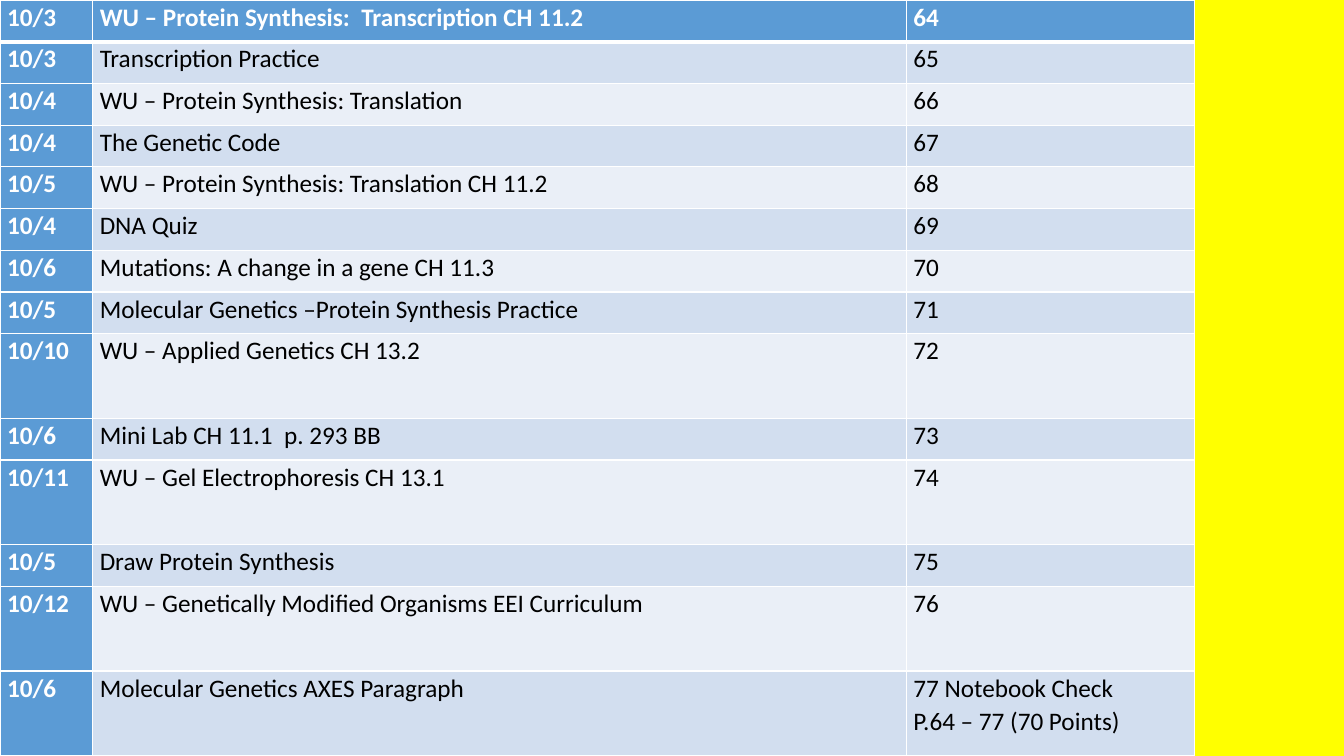
from dataclasses import dataclass

from lxml.etree import SubElement
from pptx import Presentation
from pptx.dml.color import RGBColor
from pptx.oxml.ns import qn
from pptx.util import Inches, Pt


@dataclass(frozen=True)
class Theme:
    background: str = "FFFF00"
    accent: str = "5B9BD5"
    bands: tuple = ("EAEFF7", "D2DEEF")
    light_text: str = "FFFFFF"
    dark_text: str = "000000"
    border: str = "FFFFFF"
    font: str = "Calibri"
    size: int = 18
    line_spacing: float = 1.07
    thin_border: int = 1
    header_border: int = 3


THEME = Theme()
SLIDE_WIDTH, SLIDE_HEIGHT = 13.33, 7.5
COLUMN_WIDTHS = (0.92, 8.07, 2.86)
TALL_ROW = 0.84
TALL_DATES = ("10/10", "10/11", "10/12")

# Date, assignment and notebook page
ENTRIES = [
    ("10/3", "WU – Protein Synthesis:  Transcription CH 11.2", "64"),
    ("10/3", "Transcription Practice", "65"),
    ("10/4", "WU – Protein Synthesis: Translation", "66"),
    ("10/4", "The Genetic Code", "67"),
    ("10/5", "WU – Protein Synthesis: Translation CH 11.2", "68"),
    ("10/4", "DNA Quiz", "69"),
    ("10/6", "Mutations: A change in a gene CH 11.3", "70"),
    ("10/5", "Molecular Genetics –Protein Synthesis Practice", "71"),
    ("10/10", "WU – Applied Genetics CH 13.2", "72"),
    ("10/6", "Mini Lab CH 11.1  p. 293 BB", "73"),
    ("10/11", "WU – Gel Electrophoresis CH 13.1", "74"),
    ("10/5", "Draw Protein Synthesis", "75"),
    ("10/12", "WU – Genetically Modified Organisms EEI Curriculum", "76"),
    ("10/6", "Molecular Genetics AXES Paragraph", "77 Notebook Check\nP.64 – 77 (70 Points)"),
]


def set_background(slide):
    fill = slide.background.fill
    fill.solid()
    fill.fore_color.rgb = RGBColor.from_string(THEME.background)


def row_heights():
    """Tall rows are fixed; the others share the rest of the slide height."""
    tall = [date in TALL_DATES or "\n" in page for date, _, page in ENTRIES]
    short_row = (SLIDE_HEIGHT - TALL_ROW * sum(tall)) / tall.count(False)
    return [TALL_ROW if is_tall else short_row for is_tall in tall]


def set_borders(cell, top, bottom):
    properties = cell._tc.get_or_add_tcPr()
    widths = {"L": THEME.thin_border, "R": THEME.thin_border, "T": top, "B": bottom}
    for side, width in widths.items():
        line = SubElement(properties, qn(f"a:ln{side}"), w=str(Pt(width)))
        fill = SubElement(line, qn("a:solidFill"))
        SubElement(fill, qn("a:srgbClr"), val=THEME.border)


def write_cell(cell, text, fill_color, text_color, bold):
    cell.margin_left = cell.margin_right = Inches(0.07)
    cell.margin_top = cell.margin_bottom = Inches(0)
    cell.fill.solid()
    cell.fill.fore_color.rgb = RGBColor.from_string(fill_color)
    frame = cell.text_frame
    for index, content in enumerate(text.split("\n")):
        paragraph = frame.add_paragraph() if index else frame.paragraphs[0]
        paragraph.line_spacing = THEME.line_spacing
        run = paragraph.add_run()
        run.text = content
        run.font.name = THEME.font
        run.font.size = Pt(THEME.size)
        run.font.bold = bold
        run.font.color.rgb = RGBColor.from_string(text_color)


def add_schedule(slide):
    shape = slide.shapes.add_table(
        len(ENTRIES), len(COLUMN_WIDTHS), Inches(0), Inches(0),
        Inches(sum(COLUMN_WIDTHS)), Inches(SLIDE_HEIGHT))
    table = shape.table
    table.first_col = True
    for column, width in zip(table.columns, COLUMN_WIDTHS):
        column.width = Inches(width)
    for row, height in zip(table.rows, row_heights()):
        row.height = Inches(height)

    # The first row and the date column are accented, the rest is banded
    for row_index, entry in enumerate(ENTRIES):
        top = THEME.header_border if row_index == 1 else THEME.thin_border
        bottom = THEME.header_border if row_index == 0 else THEME.thin_border
        for column_index, text in enumerate(entry):
            cell = table.cell(row_index, column_index)
            accented = row_index == 0 or column_index == 0
            set_borders(cell, top, bottom)
            write_cell(
                cell, text,
                THEME.accent if accented else THEME.bands[row_index % 2],
                THEME.light_text if accented else THEME.dark_text,
                accented)


def main():
    presentation = Presentation()
    presentation.slide_width = Inches(SLIDE_WIDTH)
    presentation.slide_height = Inches(SLIDE_HEIGHT)
    blank_layout = presentation.slide_layouts[6]
    slide = presentation.slides.add_slide(blank_layout)
    set_background(slide)
    add_schedule(slide)
    presentation.save("out.pptx")


if __name__ == "__main__":
    main()
